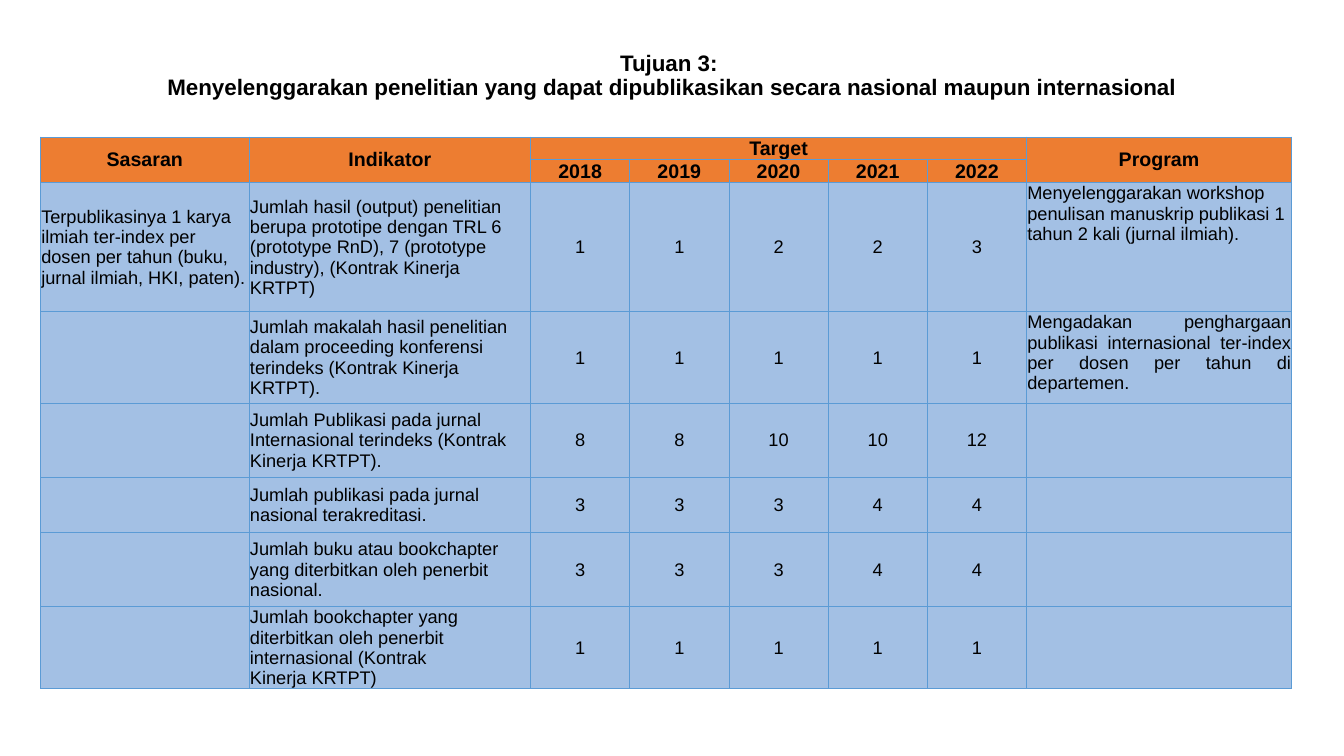
"""Build the slide of research targets for Tujuan 3."""
from lxml import etree
from pptx import Presentation
from pptx.dml.color import RGBColor
from pptx.enum.text import MSO_ANCHOR, MSO_AUTO_SIZE, PP_ALIGN
from pptx.oxml.ns import qn
from pptx.util import Cm, Pt

CENTER, LEFT, JUSTIFY = PP_ALIGN.CENTER, PP_ALIGN.LEFT, PP_ALIGN.JUSTIFY
TOP, MIDDLE, BOTTOM = MSO_ANCHOR.TOP, MSO_ANCHOR.MIDDLE, MSO_ANCHOR.BOTTOM
NO_AUTOFIT = MSO_AUTO_SIZE.NONE

FONT = "Arial"
BLACK, ORANGE, PALE_BLUE, BORDER_BLUE = "000000", "ED7D31", "A3C0E4", "5B9BD5"

HEADING = ("Tujuan 3: \nMenyelenggarakan penelitian yang dapat dipublikasikan "
           "secara nasional maupun internasional")
YEARS = ["2018", "2019", "2020", "2021", "2022"]
TARGET_ROWS = [
    ("Terpublikasinya 1 karya ilmiah ter-index per dosen per tahun (buku, jurnal ilmiah, HKI, paten).",
     "Jumlah hasil (output) penelitian berupa prototipe dengan TRL 6 (prototype RnD), 7 (prototype\n"
     "industry), (Kontrak Kinerja\nKRTPT)",
     (1, 1, 2, 2, 3),
     "Menyelenggarakan workshop penulisan manuskrip publikasi 1 tahun 2 kali (jurnal ilmiah).", LEFT),
    ("",
     "Jumlah makalah hasil penelitian dalam proceeding konferensi\n"
     "terindeks (Kontrak Kinerja\nKRTPT).",
     (1, 1, 1, 1, 1),
     "Mengadakan penghargaan publikasi internasional ter-index per dosen per tahun di departemen.", JUSTIFY),
    ("", "Jumlah Publikasi pada jurnal Internasional terindeks (Kontrak Kinerja KRTPT).",
     (8, 8, 10, 10, 12), "", LEFT),
    ("", "Jumlah publikasi pada jurnal nasional terakreditasi.",
     (3, 3, 3, 4, 4), "", LEFT),
    ("", "Jumlah buku atau bookchapter yang diterbitkan oleh penerbit\nnasional.",
     (3, 3, 3, 4, 4), "", LEFT),
    ("", "Jumlah bookchapter yang diterbitkan oleh penerbit\ninternasional (Kontrak\nKinerja KRTPT)",
     (1, 1, 1, 1, 1), "", LEFT),
]
COLUMN_WIDTHS = [5.26, 7.09] + [2.5] * len(YEARS) + [6.68]
ROW_HEIGHTS = [0.48, 0.48, 3.25, 2.31, 1.86, 1.4, 1.86, 1.86]
FIRST_YEAR, PROGRAM = 2, 2 + len(YEARS)


def color(hex_code):
    return RGBColor.from_string(hex_code)


def write(frame, text, size, bold, align):
    paragraph = frame.paragraphs[0]
    paragraph.alignment = align
    paragraph.font.size = Pt(size)
    for index, line in enumerate(text.split("\n")):
        if index:
            paragraph.add_line_break()
        run = paragraph.add_run()
        run.text = line
        run.font.name = FONT
        run.font.size = Pt(size)
        run.font.bold = bold
        run.font.color.rgb = color(BLACK)
    return paragraph


def style_cell(cell, fill):
    cell.margin_left = cell.margin_right = cell.margin_top = Cm(0.02)
    cell.margin_bottom = 0
    properties = cell._tc.get_or_add_tcPr()
    for side in ("a:lnL", "a:lnR", "a:lnT", "a:lnB"):
        line = etree.SubElement(properties, qn(side), w=str(Pt(0.5)))
        solid = etree.SubElement(line, qn("a:solidFill"))
        etree.SubElement(solid, qn("a:srgbClr"), val=BORDER_BLUE)
    cell.fill.solid()
    cell.fill.fore_color.rgb = color(fill)


def fill_cell(cell, text, size, bold, align, anchor):
    cell.vertical_anchor = anchor
    if text:
        write(cell.text_frame, text, size, bold, align)


def add_heading(slide):
    title = slide.shapes.title
    title.left, title.top, title.width, title.height = Cm(2.33), Cm(1.02), Cm(29.21), Cm(1.8)
    title.text_frame.auto_size = NO_AUTOFIT
    title.text_frame.word_wrap = True
    title.text_frame.vertical_anchor = MIDDLE
    write(title.text_frame, HEADING, 16, True, CENTER).line_spacing = 0.9


def add_targets(slide):
    table = slide.shapes.add_table(
        len(ROW_HEIGHTS), len(COLUMN_WIDTHS), Cm(1.02), Cm(3.45),
        Cm(sum(COLUMN_WIDTHS)), Cm(sum(ROW_HEIGHTS))).table
    table.first_row = table.horz_banding = False
    for column, width in zip(table.columns, COLUMN_WIDTHS):
        column.width = Cm(width)
    for index, (row, height) in enumerate(zip(table.rows, ROW_HEIGHTS)):
        row.height = Cm(height)
        for cell in row.cells:
            style_cell(cell, ORANGE if index < 2 else PALE_BLUE)

    for column, label in ((0, "Sasaran"), (1, "Indikator"), (PROGRAM, "Program")):
        table.cell(0, column).merge(table.cell(1, column))
        fill_cell(table.cell(0, column), label, 14, True, CENTER, MIDDLE)
    table.cell(0, FIRST_YEAR).merge(table.cell(0, PROGRAM - 1))
    fill_cell(table.cell(0, FIRST_YEAR), "Target", 14, True, CENTER, BOTTOM)
    for column, year in enumerate(YEARS, FIRST_YEAR):
        fill_cell(table.cell(1, column), year, 14, True, CENTER, BOTTOM)

    for row, (sasaran, indikator, targets, program, program_align) in enumerate(TARGET_ROWS, 2):
        fill_cell(table.cell(row, 0), sasaran, 13, False, LEFT, MIDDLE)
        fill_cell(table.cell(row, 1), indikator, 13, False, LEFT, MIDDLE)
        for column, target in enumerate(targets, FIRST_YEAR):
            fill_cell(table.cell(row, column), str(target), 13, False, CENTER, MIDDLE)
        fill_cell(table.cell(row, PROGRAM), program, 13, False, program_align, TOP)


def main():
    presentation = Presentation()
    presentation.slide_width, presentation.slide_height = Cm(33.87), Cm(19.05)
    slide = presentation.slides.add_slide(presentation.slide_layouts[5])
    add_heading(slide)
    add_targets(slide)
    presentation.save("out.pptx")


if __name__ == "__main__":
    main()
